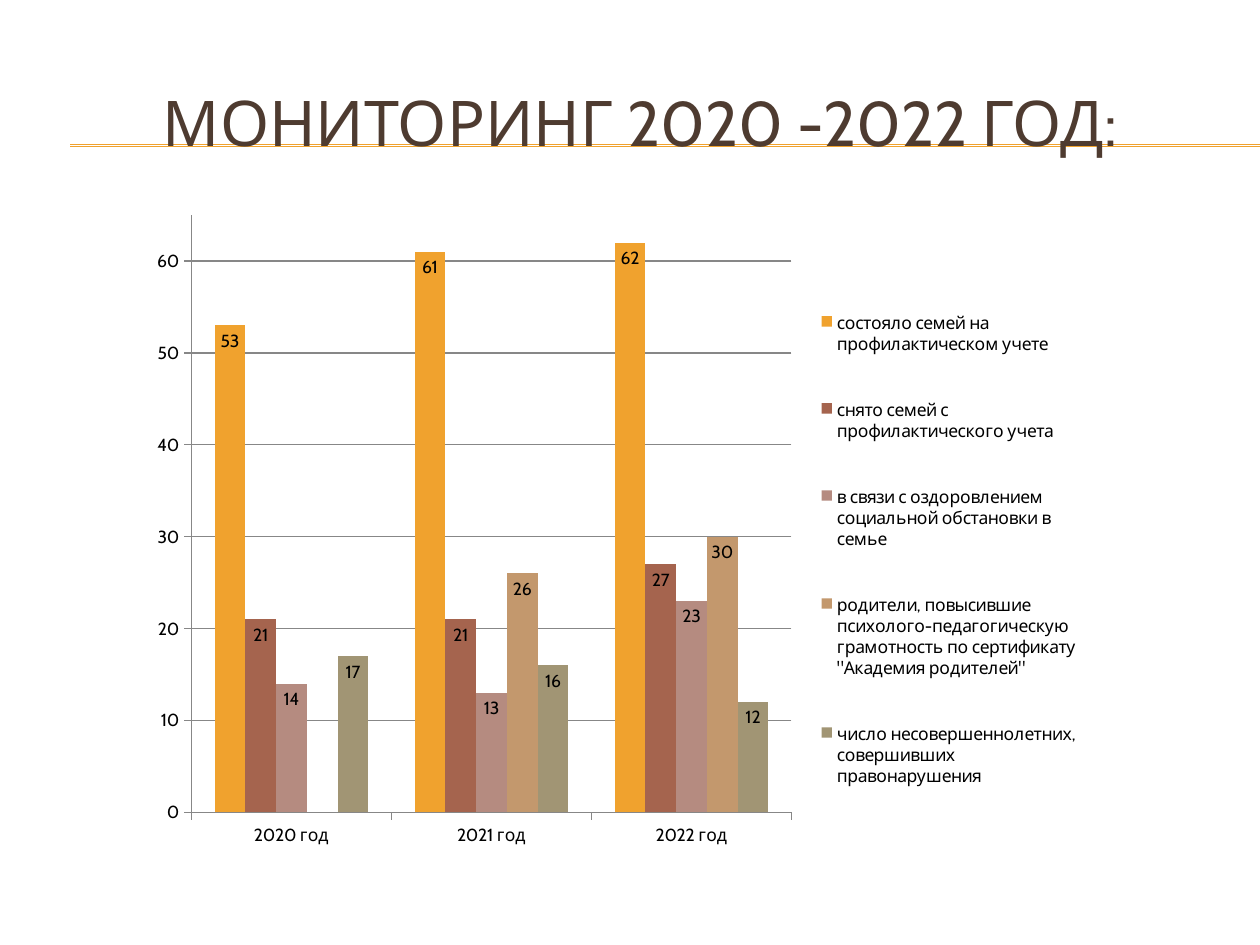
from dataclasses import dataclass

from lxml import etree
from pptx import Presentation
from pptx.chart.data import CategoryChartData
from pptx.dml.color import RGBColor
from pptx.enum import chart as ch, shapes, text
from pptx.oxml.ns import qn
from pptx.util import Cm, Pt


@dataclass(frozen=True)
class Theme:
    font: str = "Cabin"
    title_size: int = 36
    chart_size: int = 10
    title: str = "4E3B30"
    accent: str = "F0A22E"
    ink: str = "000000"
    grid: str = "878787"


@dataclass(frozen=True)
class Indicator:
    name: str
    values: tuple[int | None, ...]
    color: str


THEME = Theme()
YEARS = ("2020 год", "2021 год", "2022 год")
INDICATORS = (
    Indicator("состояло семей на профилактическом учете", (53, 61, 62), THEME.accent),
    Indicator("снято семей с профилактического учета", (21, 21, 27), "A5644E"),
    Indicator("в связи с оздоровлением социальной обстановки в семье", (14, 13, 23), "B58B80"),
    Indicator("родители, повысившие психолого-педагогическую грамотность по сертификату "
              "\"Академия родителей\"", (None, 26, 30), "C3986D"),
    Indicator("число несовершеннолетних, совершивших правонарушения", (17, 16, 12), "A19574"),
)


def style_font(font, size: int, color: str) -> None:
    font.name = THEME.font
    font.size = Pt(size)
    font.color.rgb = RGBColor.from_string(color)


def style_line(line, color: str) -> None:
    line.color.rgb = RGBColor.from_string(color)
    line.width = Pt(0.75)


def add_rule(slide, y: float) -> None:
    rule = slide.shapes.add_connector(
        shapes.MSO_CONNECTOR.STRAIGHT, Cm(1.42), Cm(y), Cm(25.4), Cm(y))
    style_line(rule.line, THEME.accent)
    etree.SubElement(rule.line._get_or_add_ln().getparent(), qn("a:effectLst"))


def add_title(slide, wording: str) -> None:
    title = slide.shapes.add_textbox(Cm(0.84), Cm(1.27), Cm(24.13), Cm(2.34))
    frame = title.text_frame
    frame.word_wrap = True
    frame.vertical_anchor = text.MSO_ANCHOR.MIDDLE
    frame.text = wording
    heading = frame.paragraphs[0]
    heading.alignment = text.PP_ALIGN.CENTER
    style_font(heading.runs[0].font, THEME.title_size, THEME.title)


def place(part, x: float, y: float, w: float, h: float, inner: bool = False) -> None:
    """Fix a chart part at fractions of the chart area."""
    layout = part.find(qn("c:layout"))
    if layout is None:
        layout = etree.Element(qn("c:layout"))
        legend_pos = part.find(qn("c:legendPos"))
        if legend_pos is None:
            part.insert(0, layout)
        else:
            legend_pos.addnext(layout)
    manual = etree.SubElement(layout, qn("c:manualLayout"))
    settings = [("layoutTarget", "inner")] if inner else []
    settings += [("xMode", "edge"), ("yMode", "edge"), ("x", x), ("y", y), ("w", w), ("h", h)]
    for tag, value in settings:
        etree.SubElement(manual, qn(f"c:{tag}")).set("val", str(value))


def add_monitoring_chart(slide) -> None:
    data = CategoryChartData()
    data.categories = YEARS
    for indicator in INDICATORS:
        data.add_series(indicator.name, indicator.values)
    chart = slide.shapes.add_chart(
        ch.XL_CHART_TYPE.COLUMN_CLUSTERED,
        Cm(2.9), Cm(3.94), Cm(19.2), Cm(13.23), data).chart
    style_font(chart.font, THEME.chart_size, THEME.ink)
    chart.has_title = False

    # Columns and their labels
    plot = chart.plots[0]
    plot.gap_width = 150
    plot.overlap = 0
    plot.vary_by_categories = False
    for series, indicator in zip(plot.series, INDICATORS):
        series.format.fill.solid()
        series.format.fill.fore_color.rgb = RGBColor.from_string(indicator.color)
        labels = series.data_labels
        labels.show_value = True
        labels.position = ch.XL_LABEL_POSITION.INSIDE_END

    # Axes and grid
    values = chart.value_axis
    values.minimum_scale, values.maximum_scale, values.major_unit = 0, 65, 10
    values.has_major_gridlines = True
    style_line(values.major_gridlines.format.line, THEME.grid)
    for axis in (chart.category_axis, values):
        axis.major_tick_mark = ch.XL_TICK_MARK.OUTSIDE
        style_line(axis.format.line, THEME.grid)

    # Legend and plot position
    chart.has_legend = True
    chart.legend.position = ch.XL_LEGEND_POSITION.RIGHT
    chart.legend.include_in_layout = False
    place(chart.legend._element, 0.7, 0.11, 0.29, 0.86)
    place(plot._element.getparent(), 0.05, 0.03, 0.63, 0.91, inner=True)


def main() -> None:
    deck = Presentation()
    deck.slide_width, deck.slide_height = Cm(25.4), Cm(19.05)
    slide = deck.slides.add_slide(deck.slide_layouts[6])
    for y in (2.92, 2.95):
        add_rule(slide, y)
    add_title(slide, "МОНИТОРИНГ 2020 -2022 ГОД:")
    add_monitoring_chart(slide)
    deck.save("out.pptx")


if __name__ == "__main__":
    main()
